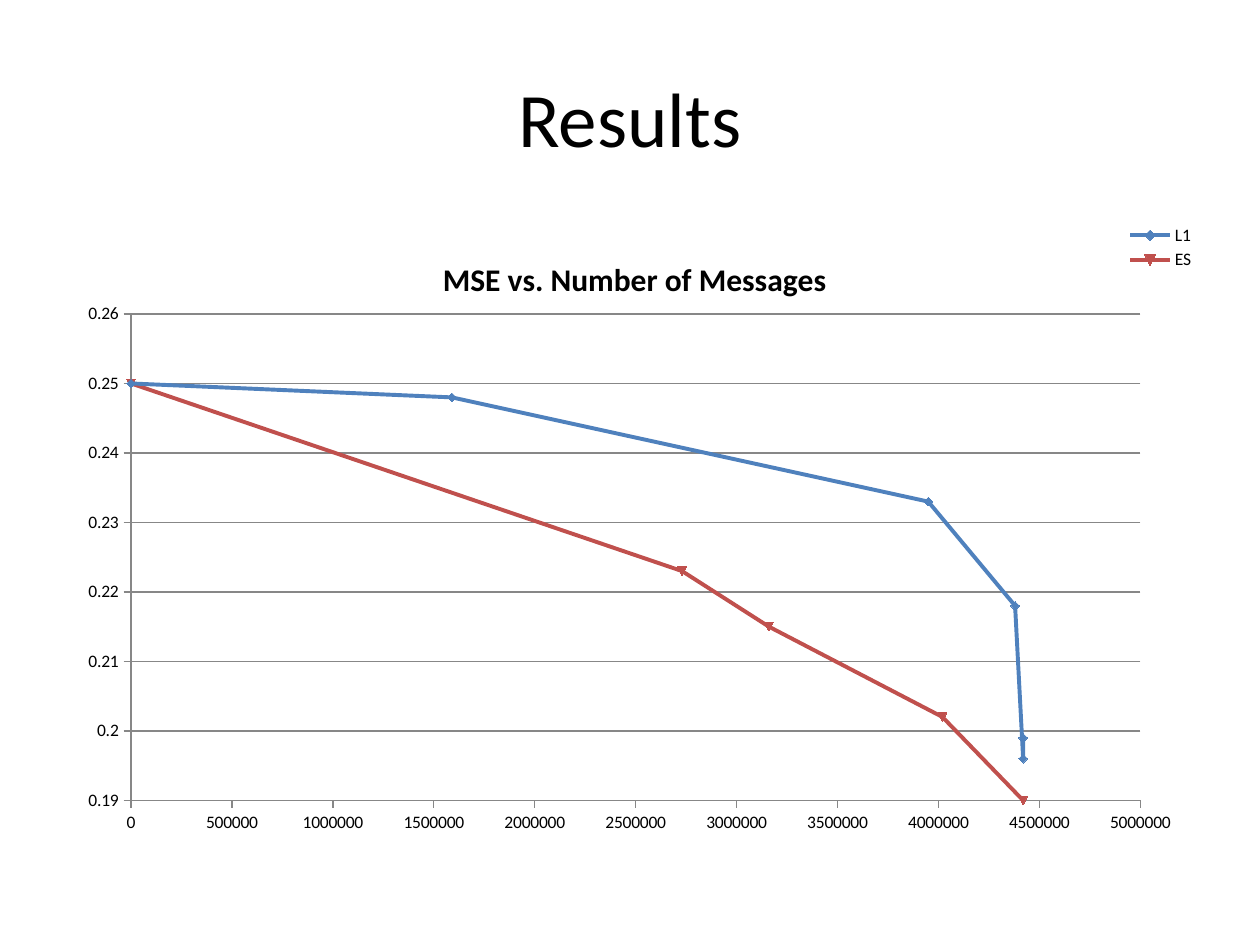
from pptx import Presentation
from pptx.chart.data import XyChartData
from pptx.dml.color import RGBColor
from pptx.enum.chart import XL_CHART_TYPE, XL_LEGEND_POSITION, XL_TICK_MARK
from pptx.enum.text import MSO_ANCHOR, PP_ALIGN
from pptx.oxml import parse_xml
from pptx.oxml.ns import nsdecls
from pptx.util import Inches, Pt

SCATTER_LINES = XL_CHART_TYPE.XY_SCATTER_LINES
CORNER = XL_LEGEND_POSITION.CORNER
OUTSIDE = XL_TICK_MARK.OUTSIDE
MIDDLE = MSO_ANCHOR.MIDDLE
CENTER = PP_ALIGN.CENTER

MESSAGE_CURVES = {
    "L1": ("4F81BD", [(4420000, 0.199), (4420000, 0.196), (4380000, 0.218),
                      (3950000, 0.233), (1590000, 0.248), (0, 0.25)]),
    "ES": ("C0504D", [(0, 0.25), (2730000, 0.223), (3160000, 0.215),
                      (4020000, 0.202), (4420000, 0.19)]),
}


def color(hex_code):
    return RGBColor.from_string(hex_code)


def manual_layout(**shares):
    target = '<c:layoutTarget val="inner"/>' if "w" in shares else ""
    modes = "".join(f'<c:{key}Mode val="edge"/>' for key in "xy")
    values = "".join(f'<c:{key} val="{share}"/>' for key, share in shares.items())
    return parse_xml(f'<c:layout {nsdecls("c")}><c:manualLayout>'
                     f'{target}{modes}{values}</c:manualLayout></c:layout>')


class ResultsSlide:
    """Holds the style and current slide, placing elements by shares of its size."""

    FONT, INK, GRID = "Calibri", "000000", "878787"

    def __init__(self, deck):
        self.size = (deck.slide_width, deck.slide_height)
        self.slide = deck.slides.add_slide(deck.slide_layouts[5])

    def box(self, left, top, width, height):
        across, down = self.size
        return (round(left * across), round(top * down),
                round(width * across), round(height * down))

    def style_font(self, font, size, bold=False):
        font.name, font.size, font.bold = self.FONT, Pt(size), bold
        font.color.rgb = color(self.INK)

    def title(self, wording, *shares):
        heading = self.slide.shapes.title
        heading.left, heading.top, heading.width, heading.height = self.box(*shares)
        frame = heading.text_frame
        frame.text, frame.vertical_anchor = wording, MIDDLE
        frame.paragraphs[0].alignment = CENTER
        self.style_font(frame.paragraphs[0].font, 44)

    def axis(self, axis, low, high, step, gridlines):
        axis.minimum_scale, axis.maximum_scale, axis.major_unit = low, high, step
        axis.major_tick_mark = OUTSIDE
        axis.format.line.color.rgb = color(self.GRID)
        axis.has_major_gridlines = gridlines
        if gridlines:
            axis.major_gridlines.format.line.color.rgb = color(self.GRID)

    def scatter(self, heading, curves, *shares):
        data = XyChartData()
        for name, (_, points) in curves.items():
            series = data.add_series(name)
            for messages, error in points:
                series.add_data_point(messages, error)
        chart = self.slide.shapes.add_chart(SCATTER_LINES, *self.box(*shares), data).chart
        self.style_font(chart.font, 10)

        plot = chart.plots[0]
        plot.vary_by_categories = False
        for series, (stroke, _) in zip(plot.series, curves.values()):
            series.smooth = False
            series.format.line.width = Pt(2.25)
            series.format.line.color.rgb = color(stroke)

        self.axis(chart.category_axis, 0, 5000000, 500000, False)
        self.axis(chart.value_axis, 0.19, 0.26, 0.01, True)
        chart.has_legend = True
        chart.legend.position = CORNER
        chart.legend.include_in_layout = True

        chart.has_title = True
        caption = chart.chart_title.text_frame
        caption.text = heading
        self.style_font(caption.paragraphs[0].font, 18, bold=True)
        self.arrange(chart)

    def arrange(self, chart):
        plot_area = chart.plots[0]._element.getparent()
        title = chart.chart_title._element
        for part in (plot_area, title):
            for layout in part.xpath("c:layout"):
                part.remove(layout)
        plot_area.insert(0, manual_layout(x=0.06, y=0.15, w=0.89, h=0.78))
        title.xpath("c:tx")[0].addnext(manual_layout(x=0.33, y=0.05))


def main():
    deck = Presentation()
    deck.slide_width, deck.slide_height = Inches(10), Inches(7.5)
    results = ResultsSlide(deck)
    results.title("Results", 0.05, 0.04, 0.9, 1 / 6)
    results.scatter("MSE vs. Number of Messages", MESSAGE_CURVES,
                    0.05, 7 / 30, 0.9, 0.66)
    deck.save("out.pptx")


if __name__ == "__main__":
    main()
